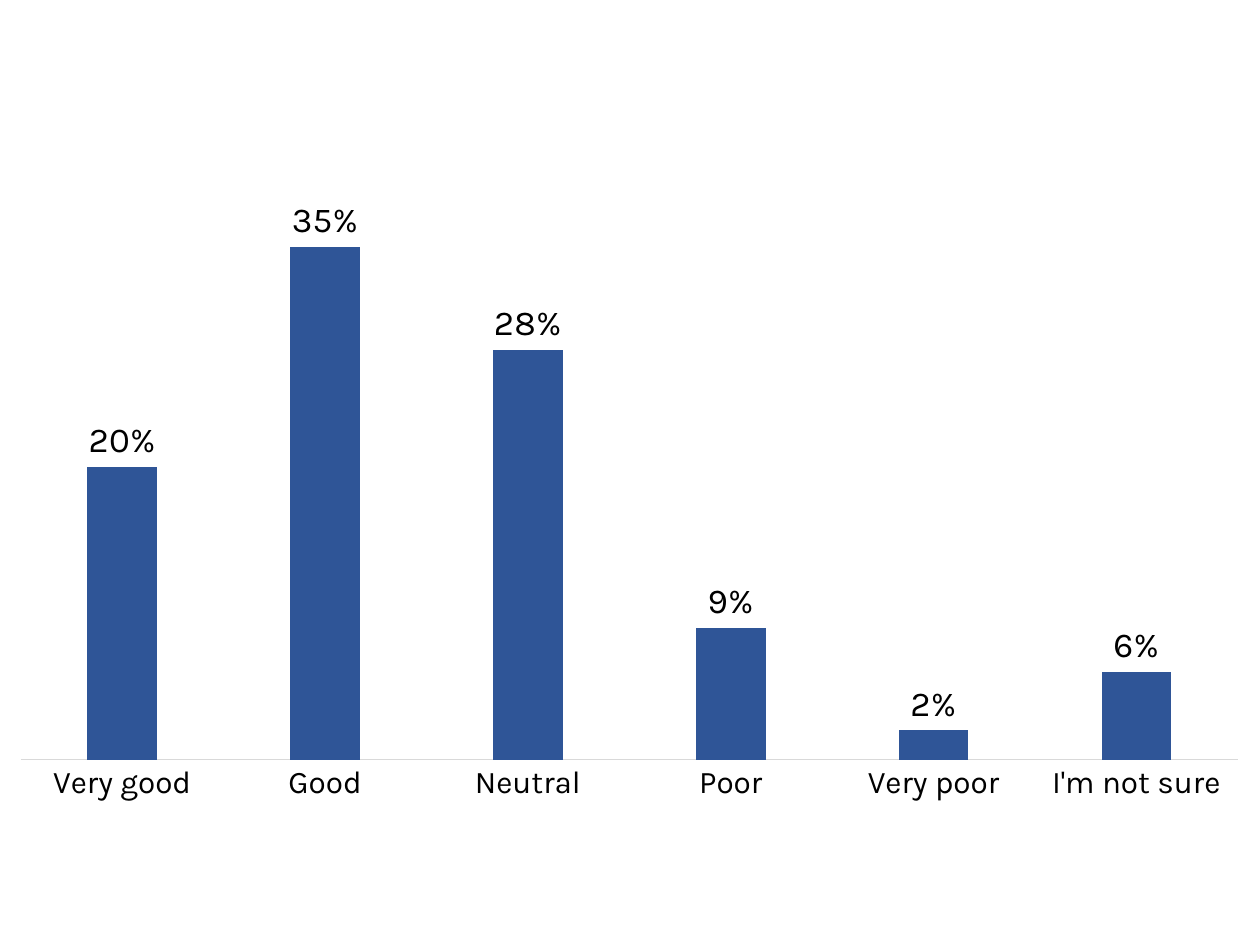
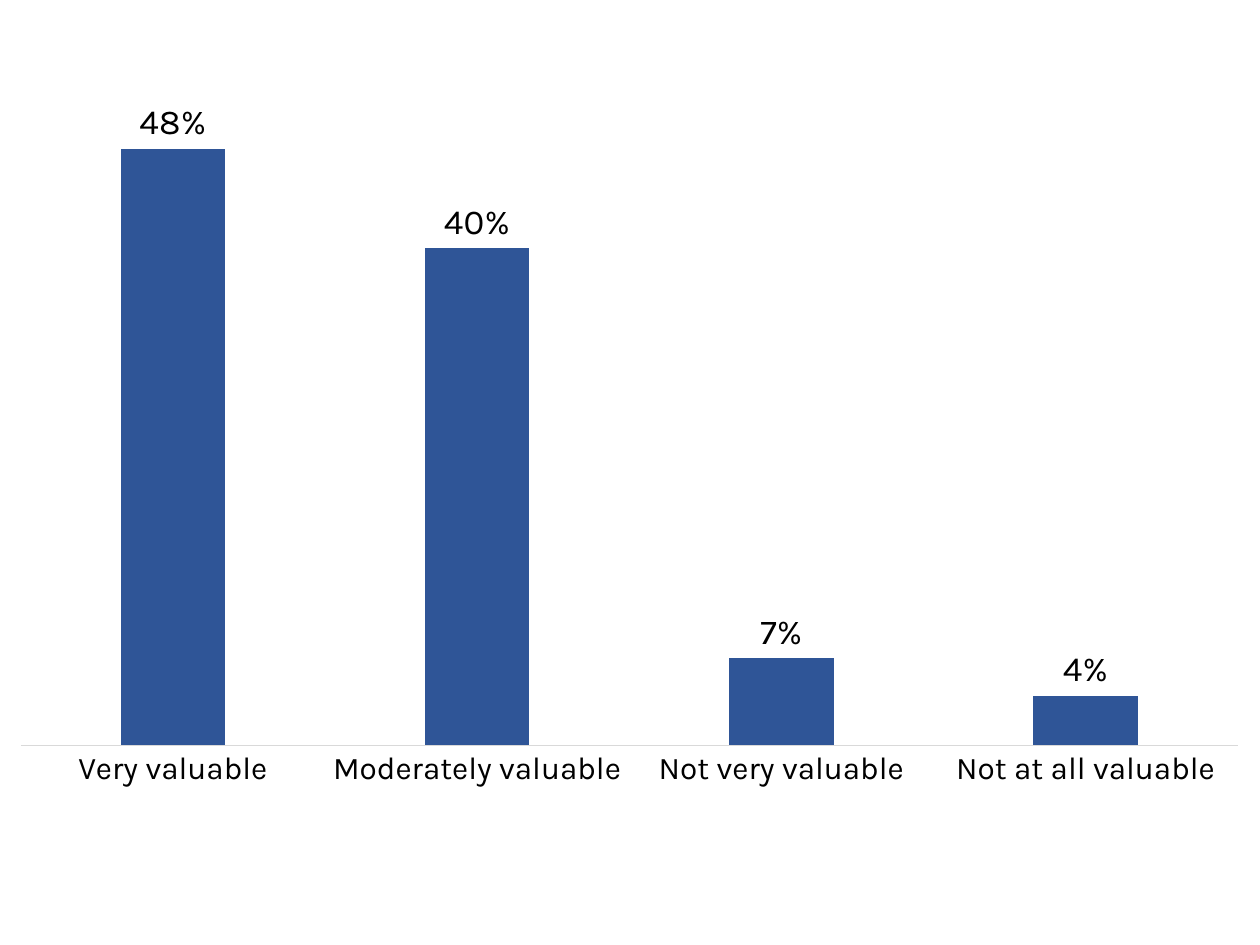
"""Builds two survey result slides, each with one column chart."""
from dataclasses import dataclass

from lxml import etree
from pptx import Presentation
from pptx.chart.data import CategoryChartData
from pptx.dml.color import RGBColor
from pptx.enum.chart import XL_CHART_TYPE, XL_LABEL_POSITION, XL_TICK_MARK
from pptx.oxml.ns import qn
from pptx.util import Inches, Pt

COLUMNS = XL_CHART_TYPE.COLUMN_CLUSTERED
OUTSIDE_END = XL_LABEL_POSITION.OUTSIDE_END
NO_TICK = XL_TICK_MARK.NONE
BLANK_LAYOUT = 6


@dataclass(frozen=True)
class Theme:
    font: str = "Karla"
    ink: RGBColor = RGBColor(0x00, 0x00, 0x00)
    bar: RGBColor = RGBColor(0x2F, 0x55, 0x97)
    baseline: RGBColor = RGBColor(0xD9, 0xD9, 0xD9)
    base_size: Pt = Pt(10)
    category_size: Pt = Pt(18)
    value_size: Pt = Pt(20)
    baseline_width: Pt = Pt(0.75)
    percent: str = "###0%"
    gap: int = 191
    overlap: int = -27


class Deck:
    def __init__(self, theme):
        self.theme = theme
        self.presentation = Presentation()
        self.presentation.slide_width = Inches(10)
        self.presentation.slide_height = Inches(7.5)
        self.slide = None

    def new_slide(self):
        layout = self.presentation.slide_layouts[BLANK_LAYOUT]
        self.slide = self.presentation.slides.add_slide(layout)

    def style_font(self, font, size):
        font.name = self.theme.font
        font.size = size
        font.color.rgb = self.theme.ink

    def place_plot(self, chart, top, height):
        plot_area = chart.element.find(qn("c:chart")).find(qn("c:plotArea"))
        for old_layout in plot_area.findall(qn("c:layout")):
            plot_area.remove(old_layout)
        layout = etree.Element(qn("c:layout"))
        manual = etree.SubElement(layout, qn("c:manualLayout"))
        settings = (("layoutTarget", "inner"), ("xMode", "edge"), ("yMode", "edge"),
                    ("x", 0), ("y", top), ("w", 1), ("h", height))
        for tag, value in settings:
            etree.SubElement(manual, qn(f"c:{tag}")).set("val", str(value))
        plot_area.insert(0, layout)

    def column_chart(self, answers, top, height, plot_top, plot_height, scale_max):
        theme = self.theme
        shares = CategoryChartData(number_format=theme.percent)
        shares.categories = list(answers)
        shares.add_series("Series 1", list(answers.values()))
        chart = self.slide.shapes.add_chart(
            COLUMNS, Inches(0.16), Inches(top), Inches(9.67), Inches(height), shares
        ).chart
        chart.has_title = False
        chart.has_legend = False
        self.style_font(chart.font, theme.base_size)
        self.place_plot(chart, plot_top, plot_height)

        categories = chart.category_axis
        categories.major_tick_mark = NO_TICK
        categories.minor_tick_mark = NO_TICK
        categories.format.line.color.rgb = theme.baseline
        categories.format.line.width = theme.baseline_width
        self.style_font(categories.tick_labels.font, theme.category_size)

        scale = chart.value_axis
        scale.visible = False
        scale.has_major_gridlines = False
        scale.minimum_scale = 0
        scale.maximum_scale = scale_max
        scale.tick_labels.number_format = theme.percent
        scale.tick_labels.number_format_is_linked = False

        bars = chart.plots[0]
        bars.vary_by_categories = False
        bars.gap_width = theme.gap
        bars.overlap = theme.overlap
        series = bars.series[0]
        series.invert_if_negative = False
        series.format.fill.solid()
        series.format.fill.fore_color.rgb = theme.bar

        labels = series.data_labels
        labels.show_value = True
        labels.position = OUTSIDE_END
        labels.number_format = theme.percent
        labels.number_format_is_linked = False
        self.style_font(labels.font, theme.value_size)


def main():
    deck = Deck(Theme())

    deck.new_slide()
    quality = {"Very good": 0.2, "Good": 0.35, "Neutral": 0.28,
               "Poor": 0.09, "Very poor": 0.02, "I'm not sure": 0.06}
    deck.column_chart(quality, top=0.76, height=6.2,
                      plot_top=0.1, plot_height=0.75, scale_max=0.4)

    deck.new_slide()
    value = {"Very valuable": 0.48, "Moderately valuable": 0.4,
             "Not very valuable": 0.07, "Not at all valuable": 0.04}
    deck.column_chart(value, top=0, height=6.96,
                      plot_top=0, plot_height=0.85, scale_max=0.6)

    deck.presentation.save("out.pptx")


if __name__ == "__main__":
    main()
